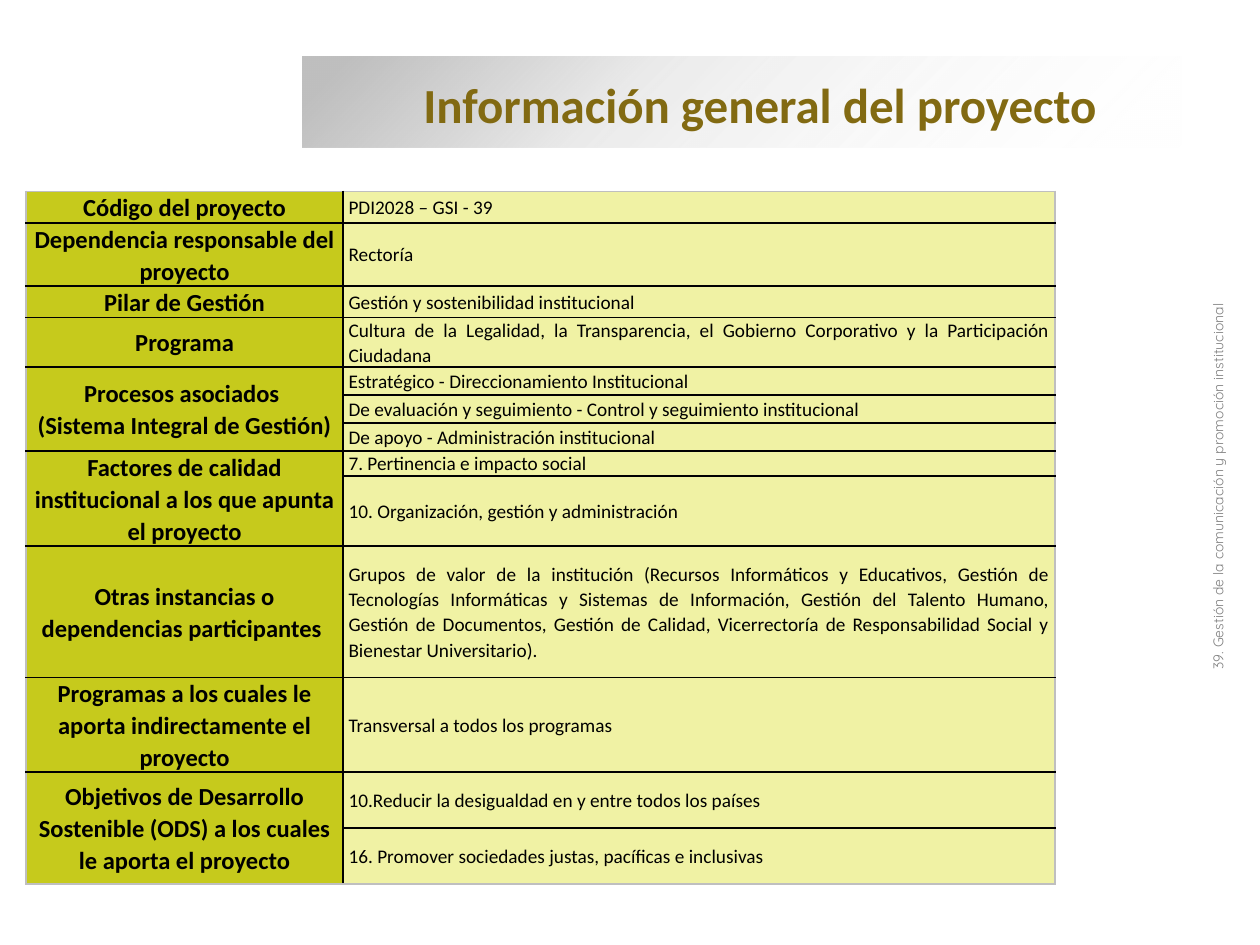
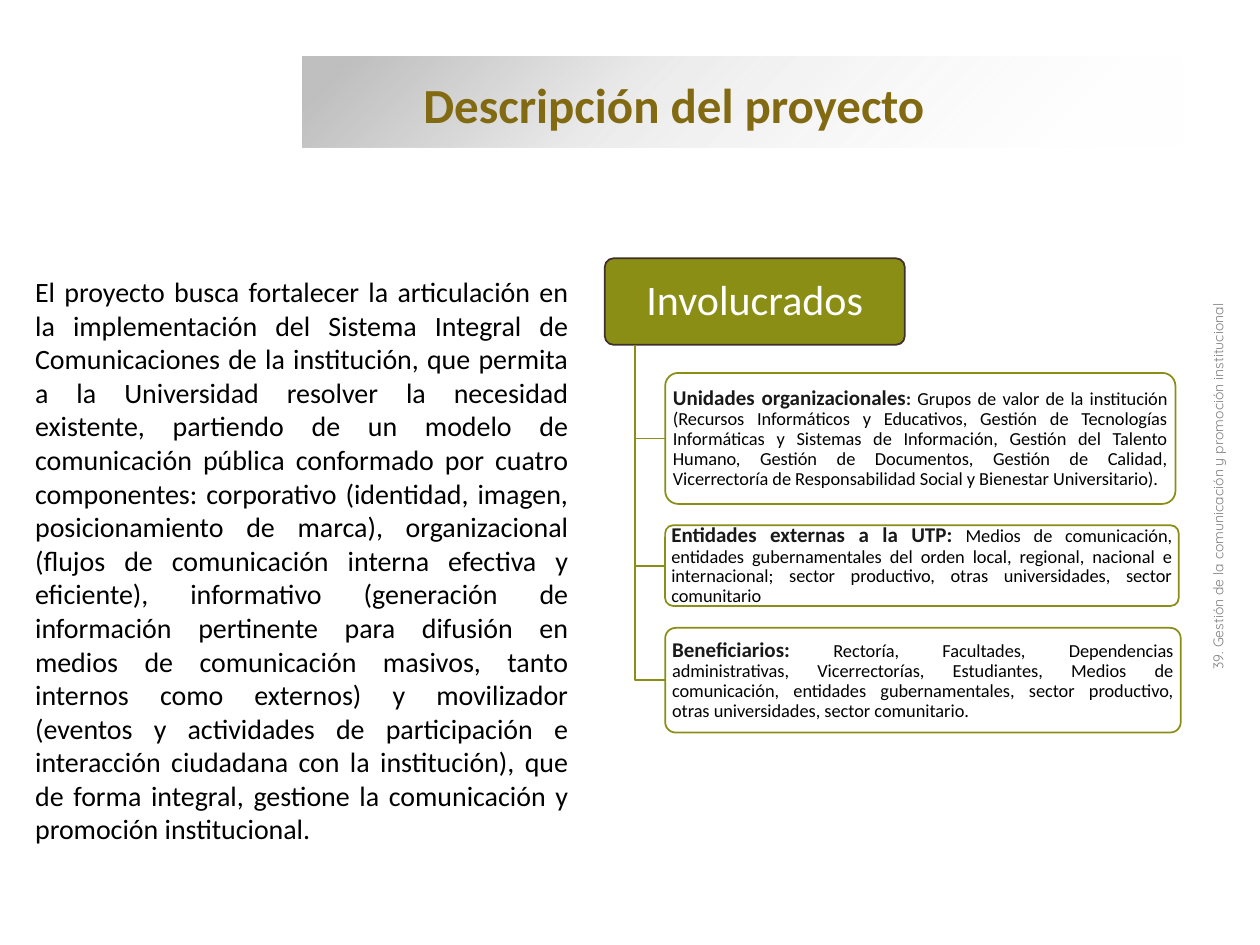
from pptx import Presentation
from pptx.dml.color import RGBColor
from pptx.enum.shapes import MSO_SHAPE
from pptx.enum.text import MSO_ANCHOR, PP_ALIGN
from pptx.oxml import parse_xml
from pptx.oxml.ns import nsdecls, qn
from pptx.util import Pt

GOLD, OLIVE, BROWN = "826A12", "8B8E14", "3F3029"
LIME, CREAM, SILVER, GRAY = "C6CA1C", "F0F2A4", "BFBFBF", "808080"
BLACK, WHITE, INK = "000000", "FFFFFF", "191919"
LEFT, MID, FULL = PP_ALIGN.LEFT, PP_ALIGN.CENTER, PP_ALIGN.JUSTIFY
FOOTER = "39. Gestión de la comunicación y promoción institucional"

FACTS = [
    ("Código del proyecto", [(18, "PDI2028 – GSI - 39", LEFT)]),
    ("Dependencia responsable del proyecto", [(36, "Rectoría", LEFT)]),
    ("Pilar de Gestión", [(18, "Gestión y sostenibilidad institucional", LEFT)]),
    ("Programa", [
        (28, "Cultura de la Legalidad, la Transparencia, el Gobierno Corporativo "
             "y la Participación Ciudadana", FULL)]),
    ("Procesos asociados \v(Sistema Integral de Gestión)", [
        (16, "Estratégico - Direccionamiento Institucional", LEFT),
        (16, "De evaluación y seguimiento - Control y seguimiento institucional", LEFT),
        (16, "De apoyo - Administración institucional", LEFT)]),
    ("Factores de calidad institucional a los que apunta el proyecto", [
        (14.5, "7. Pertinencia e impacto social", LEFT),
        (40, "10. Organización, gestión y administración", LEFT)]),
    ("Otras instancias o dependencias participantes ", [
        (75, "Grupos de valor de la institución (Recursos Informáticos y Educativos, "
             "Gestión de Tecnologías Informáticas y Sistemas de Información, Gestión "
             "del Talento Humano, Gestión de Documentos, Gestión de Calidad, "
             "Vicerrectoría de Responsabilidad Social y Bienestar Universitario).", FULL)]),
    ("Programas a los cuales le aporta indirectamente el proyecto", [
        (54, "Transversal a todos los programas", LEFT)]),
    ("Objetivos de Desarrollo Sostenible (ODS) a los cuales le aporta el proyecto", [
        (32, "10.Reducir la desigualdad en y entre todos los países", LEFT),
        (32, "16. Promover sociedades justas, pacíficas e inclusivas", LEFT)]),
]

ABOUT = (
    "El proyecto busca fortalecer la articulación en la implementación del Sistema "
    "Integral de Comunicaciones de la institución, que permita a la Universidad "
    "resolver la necesidad existente, partiendo de un modelo de comunicación pública "
    "conformado por cuatro componentes: corporativo (identidad, imagen, "
    "posicionamiento de marca), organizacional (flujos de comunicación interna "
    "efectiva y eficiente), informativo (generación de información pertinente para "
    "difusión en medios de comunicación masivos, tanto internos como externos) y "
    "movilizador (eventos y actividades de participación e interacción ciudadana con "
    "la institución), que de forma integral, gestione la comunicación y promoción "
    "institucional.")

GROUPS = [
    (213.1, 291.6, 74.9, "Unidades organizacionales", ": ",
     "Grupos de valor de la institución (Recursos Informáticos y Educativos, Gestión "
     "de Tecnologías Informáticas y Sistemas de Información, Gestión del Talento "
     "Humano, Gestión de Documentos, Gestión de Calidad, Vicerrectoría de "
     "Responsabilidad Social y Bienestar Universitario)."),
    (300.2, 293.5, 46.1, "Entidades externas a la UTP:", " ",
     "Medios de comunicación, entidades gubernamentales del orden local, regional, "
     "nacional e internacional; sector productivo, otras universidades, sector "
     "comunitario"),
    (358.8, 294.6, 59.8, "Beneficiarios:", " ",
     "Rectoría, Facultades, Dependencias administrativas, Vicerrectorías, "
     "Estudiantes, Medios de comunicación, entidades gubernamentales, sector "
     "productivo, otras universidades, sector comunitario."),
]


def color(code):
    return RGBColor.from_string(code)


def place(shape, box):
    shape.left, shape.top, shape.width, shape.height = map(Pt, box)


class Deck:
    font = "Calibri"

    def __init__(self):
        self.prs = Presentation()
        self.prs.slide_width, self.prs.slide_height = Pt(720), Pt(540)

    def style(self, font, size, code, bold=False, name=None):
        font.name, font.size, font.bold = name or self.font, Pt(size), bold
        font.color.rgb = color(code)

    def page(self, title):
        self.slide = self.prs.slides.add_slide(self.prs.slide_layouts[5])
        self.shapes = self.slide.shapes
        self.band()
        head = self.shapes.title
        place(head, (234.7, 38.9, 446.4, 41))
        frame = head.text_frame
        frame.text, frame.vertical_anchor = title, MSO_ANCHOR.MIDDLE
        para = frame.paragraphs[0]
        para.alignment = LEFT
        self.style(para.font, 28, GOLD, True)
        self.text((522, 269.3, 348.5, 17.3), FOOTER, 8, GRAY, MID, "Quicksand").rotation = 270

    def shape(self, kind, box):
        shape = self.shapes.add_shape(kind, *map(Pt, box))
        shape.shadow.inherit = False
        return shape

    def band(self):
        band = self.shape(MSO_SHAPE.RECTANGLE, (172.8, 32.4, 502.6, 51.8))
        band.line.fill.background()
        stops = "".join(
            f'<a:gs pos="{pos}000"><a:srgbClr val="{code}"><a:alpha val="{alpha}000"/></a:srgbClr></a:gs>'
            for pos, code, alpha in [(5, SILVER, 100), (37, SILVER, 31), (100, WHITE, 0)])
        fill = parse_xml(f'<a:gradFill {nsdecls("a")} rotWithShape="1"><a:gsLst>{stops}</a:gsLst>'
                         '<a:lin ang="2700000" scaled="0"/></a:gradFill>')
        band._element.spPr.find(qn("a:prstGeom")).addnext(fill)
        self.shapes._spTree.insert(2, band._element)

    def text(self, box, words, size, code, align, name=None):
        area = self.shapes.add_textbox(*map(Pt, box))
        frame = area.text_frame
        frame.word_wrap, frame.text = True, words
        para = frame.paragraphs[0]
        para.alignment = align
        self.style(para.font, size, code, name=name)
        return area

    def card(self, box, fill, edge, align, runs, alpha=100):
        card = self.shape(MSO_SHAPE.ROUNDED_RECTANGLE, box)
        card.adjustments[0] = 0.1
        card.fill.solid()
        card.fill.fore_color.rgb = color(fill)
        if alpha < 100:
            tint = card._element.spPr.find(qn("a:solidFill"))[0]
            tint.append(parse_xml(f'<a:alpha {nsdecls("a")} val="{alpha}000"/>'))
        card.line.color.rgb, card.line.width = color(edge), Pt(1)
        frame = card.text_frame
        frame.word_wrap, frame.vertical_anchor = True, MSO_ANCHOR.MIDDLE
        frame.margin_left = frame.margin_right = Pt(2.2)
        frame.margin_top = frame.margin_bottom = Pt(1.4)
        para = frame.paragraphs[0]
        para.alignment, para.line_spacing = align, 0.9
        for words, size, code, bold in runs:
            run = para.add_run()
            run.text = words
            self.style(run.font, size, code, bold)

    def elbow(self, x, y, right, down):
        path = self.shapes.build_freeform(Pt(x), Pt(y))
        path.add_line_segments([(Pt(x), Pt(down)), (Pt(right), Pt(down))], close=False)
        line = path.convert_to_shape()
        line.shadow.inherit = False
        line.fill.background()
        line.line.color.rgb, line.line.width = color(OLIVE), Pt(1)

    def cell(self, cell, words, size, align, fill, bold, edges):
        cell.text, cell.vertical_anchor = words, MSO_ANCHOR.MIDDLE
        cell.margin_left = cell.margin_right = Pt(3.2)
        cell.margin_top = cell.margin_bottom = 0
        cell.fill.solid()
        cell.fill.fore_color.rgb = color(fill)
        para = cell.text_frame.paragraphs[0]
        para.alignment, para.line_spacing = align, 1.07
        self.style(para.font, size, BLACK, bold)
        for spot, (side, outer) in enumerate(zip("LRTB", edges)):
            cell._tc.tcPr.insert(spot, parse_xml(
                f'<a:ln{side} {nsdecls("a")} w="12700"><a:solidFill>'
                f'<a:srgbClr val="{SILVER if outer else BLACK}"/></a:solidFill></a:ln{side}>'))

    def table(self, left, top, widths, facts):
        sizes = [item[0] for _, items in facts for item in items]
        count = len(sizes)
        table = self.shapes.add_table(
            count, len(widths), *map(Pt, (left, top, sum(widths), sum(sizes)))).table
        table.first_row = table.horz_banding = False
        for col, width in zip(table.columns, widths):
            col.width = Pt(width)
        for row, size in zip(table.rows, sizes):
            row.height = Pt(size)
        start = 0
        for label, items in facts:
            end = start + len(items)
            for row, (_, words, align) in enumerate(items, start):
                first, last = row == 0, row == count - 1
                self.cell(table.cell(row, 0), label if row == start else "", 14, MID, LIME,
                          True, (True, False, first, end == count))
                self.cell(table.cell(row, 1), words, 11, align, CREAM,
                          False, (False, True, first, last))
            if len(items) > 1:
                table.cell(start, 0).merge(table.cell(end - 1, 0))
            start = end


def main():
    deck = Deck()
    deck.page("Información general del proyecto")
    deck.table(15, 109.4, (181, 407), FACTS)

    deck.page("Descripción del proyecto")
    deck.text((13, 153.4, 319, 337), ABOUT, 16, BLACK, FULL)
    deck.card((345.6, 147.6, 171.4, 49.4), OLIVE, BROWN, MID,
              [("Involucrados", 24, WHITE, False)])
    for top, width, height, name, gap, words in GROUPS:
        deck.elbow(362.8, 197, 380.1, top + height / 2)
        deck.card((380.1, top, width, height), WHITE, OLIVE, FULL,
                  [(name, 12, INK, True), (gap, 10.5, INK, True), (words, 10.5, BLACK, False)], 90)
    deck.prs.save("out.pptx")


if __name__ == "__main__":
    main()
